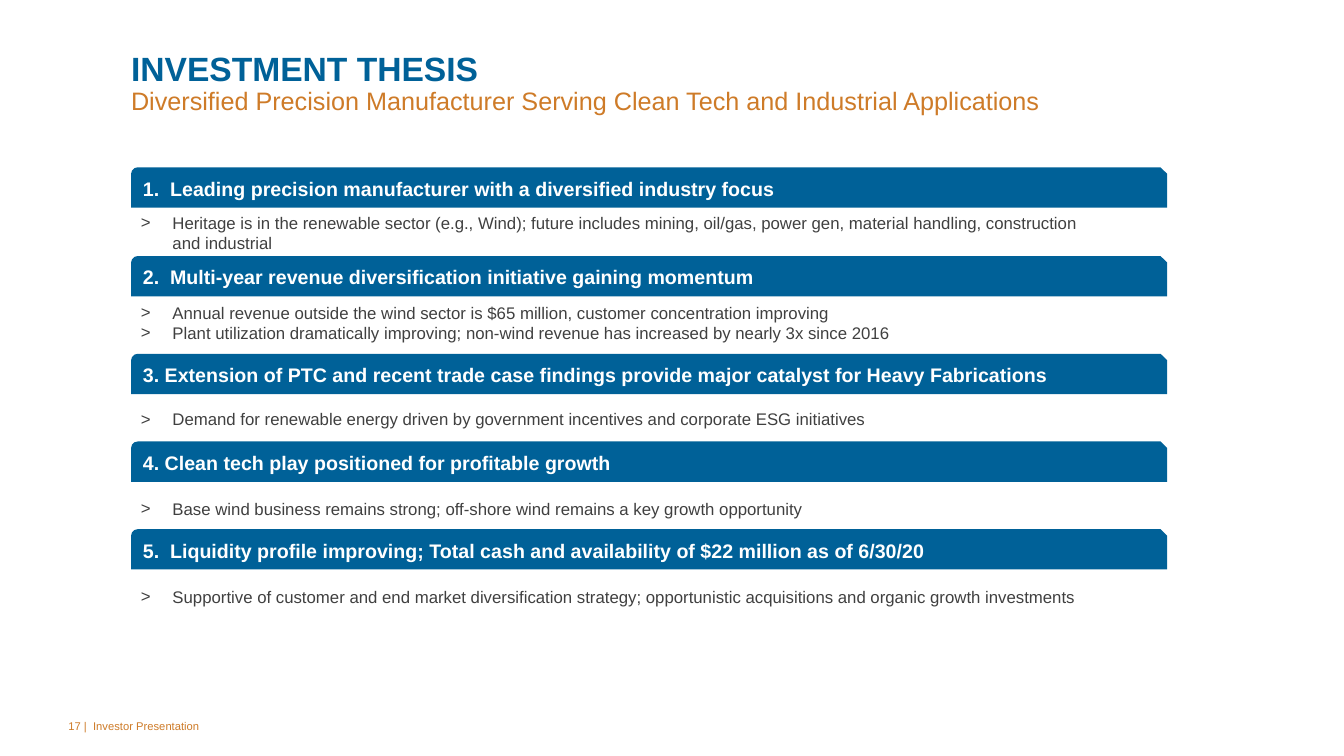
import pptx
import pptx.dml.color
import pptx.enum.shapes
import pptx.enum.text
import pptx.oxml.ns
import pptx.util
from lxml import etree

COLORS = {"blue": "006198", "orange": "CE7B28", "gray": "404040", "white": "FFFFFF"}
TITLE = "INVESTMENT THESIS"
SUBTITLE = "Diversified Precision Manufacturer Serving Clean Tech and Industrial Applications"
FOOTER = "17 |  Investor Presentation"
THESES = [
    (119.52, 151.92, "1.  Leading precision manufacturer with a diversified industry focus",
     ["Heritage is in the renewable sector (e.g., Wind); future includes mining, oil/gas, "
      "power gen, material handling, construction and industrial"]),
    (182.88, 216, "2.  Multi-year revenue diversification initiative gaining momentum",
     ["Annual revenue outside the wind sector is $65 million, customer concentration improving",
      "Plant utilization dramatically improving; non-wind revenue has increased by nearly 3x since 2016"]),
    (252.72, 285.12, "3. Extension of PTC and recent trade case findings provide major catalyst for Heavy Fabrications",
     ["Demand for renewable energy driven by government incentives and corporate ESG initiatives"]),
    (315.36, 349.2, "4. Clean tech play positioned for profitable growth",
     ["Base wind business remains strong; off-shore wind remains a key growth opportunity"]),
    (378, 411.84, "5.  Liquidity profile improving; Total cash and availability of $22 million as of 6/30/20",
     ["Supportive of customer and end market diversification strategy; "
      "opportunistic acquisitions and organic growth investments"]),
]
LEFT, WIDTH, HEIGHT = 93.6, 740.16, 28.8
INDENT = 22.5
DETAIL_RIGHT_INSET = 57.6

Pt = pptx.util.Pt
MSO_SHAPE = pptx.enum.shapes.MSO_SHAPE
MSO_ANCHOR = pptx.enum.text.MSO_ANCHOR


def rgb(name):
    return pptx.dml.color.RGBColor.from_string(COLORS[name])


def prepare_frame(shape, anchor=MSO_ANCHOR.MIDDLE, insets=(7.2, 3.6, 7.2, 3.6)):
    frame = shape.text_frame
    frame.word_wrap = True
    frame.vertical_anchor = anchor
    frame.margin_left, frame.margin_top, frame.margin_right, frame.margin_bottom = map(Pt, insets)
    return frame


def write_text(frame, text, size, color, bold=False, bullet=None, line_spacing=None):
    paragraph = frame.paragraphs[0]
    if paragraph.runs:
        paragraph = frame.add_paragraph()
    paragraph.alignment = pptx.enum.text.PP_ALIGN.LEFT
    if line_spacing:
        paragraph.line_spacing = line_spacing
    if bullet:
        properties = paragraph._p.get_or_add_pPr()
        properties.set("marL", str(Pt(INDENT)))
        properties.set("indent", str(-Pt(INDENT)))
        etree.SubElement(properties, pptx.oxml.ns.qn("a:buFont"), typeface="Arial")
        etree.SubElement(properties, pptx.oxml.ns.qn("a:buChar"), char=bullet)
    run = paragraph.add_run()
    run.text = text
    run.font.name = "Arial"
    run.font.size = Pt(size)
    run.font.bold = bold
    run.font.color.rgb = rgb(color)


def add_box(slide, kind, top, fill):
    shape = slide.shapes.add_shape(kind, Pt(LEFT), Pt(top), Pt(WIDTH), Pt(HEIGHT))
    shape.shadow.inherit = False
    shape.fill.solid()
    shape.fill.fore_color.rgb = rgb(fill)
    shape.line.fill.background()
    return shape


def main():
    presentation = pptx.Presentation()
    presentation.slide_width, presentation.slide_height = Pt(960), Pt(540)
    slide = presentation.slides.add_slide(presentation.slide_layouts[6])

    title_box = slide.shapes.add_textbox(Pt(LEFT), Pt(37.44), Pt(778.32), Pt(45.36))
    title_frame = prepare_frame(title_box, MSO_ANCHOR.BOTTOM, (0, 0, 0, 0))
    write_text(title_frame, TITLE, size=24, color="blue", bold=True, line_spacing=0.9)
    write_text(title_frame, SUBTITLE, size=18, color="orange", line_spacing=0.9)

    for band_top, detail_top, heading, details in THESES:
        band = add_box(slide, MSO_SHAPE.SNIP_ROUND_RECTANGLE, band_top, "blue")
        write_text(prepare_frame(band), heading, size=14, color="white", bold=True)
        detail_box = add_box(slide, MSO_SHAPE.RECTANGLE, detail_top, "white")
        detail_frame = prepare_frame(detail_box, insets=(7.2, 3.6, DETAIL_RIGHT_INSET, 3.6))
        for detail in details:
            write_text(detail_frame, detail, size=12, color="gray", bullet=">")

    footer_box = slide.shapes.add_textbox(Pt(41.76), Pt(504), Pt(216), Pt(28.8))
    write_text(prepare_frame(footer_box), FOOTER, size=8, color="orange")

    presentation.save("out.pptx")


if __name__ == "__main__":
    main()
